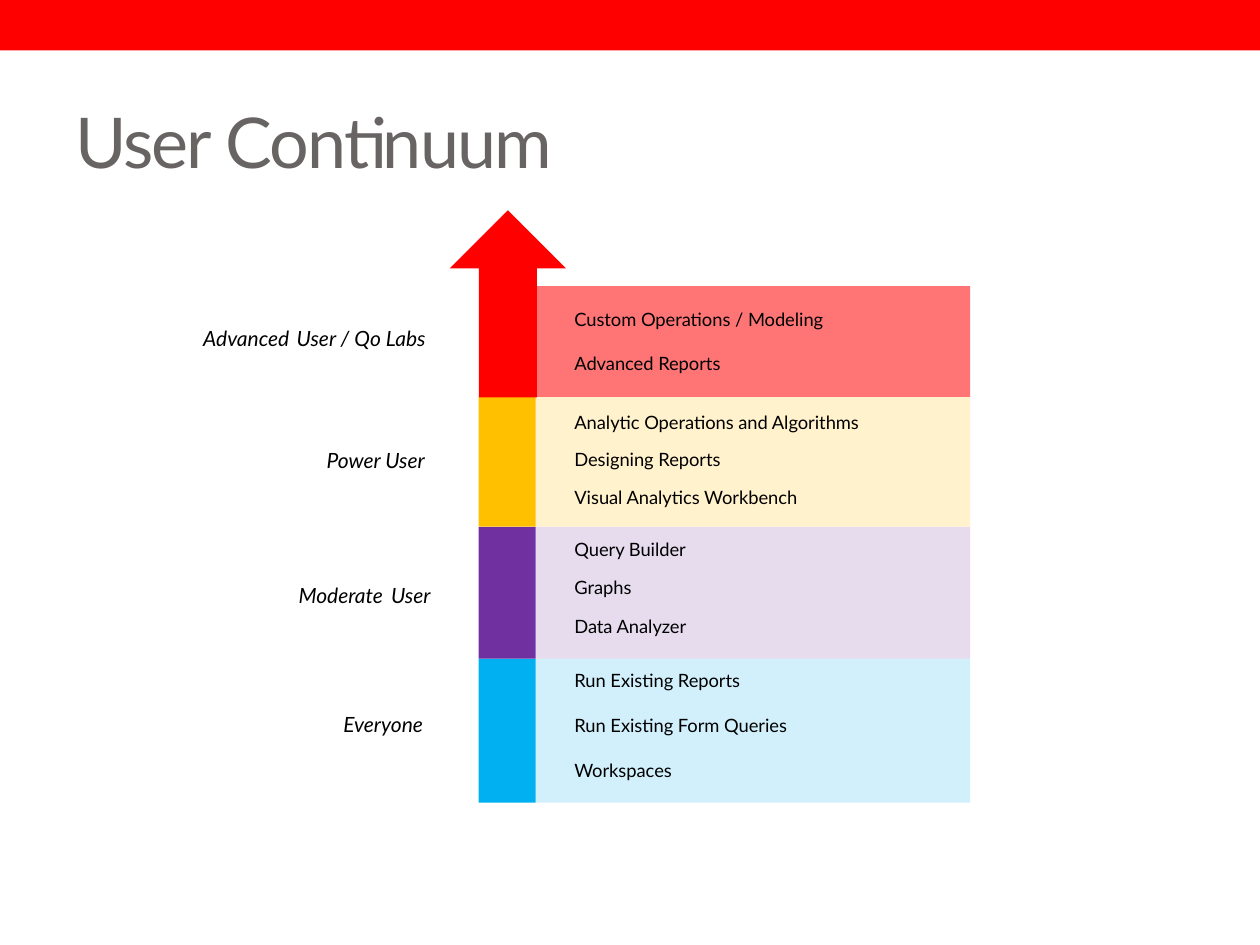
import lxml.etree
import pptx
import pptx.dml.color
import pptx.enum.shapes
import pptx.enum.text
import pptx.oxml.ns
import pptx.util

Cm = pptx.util.Cm
SHAPE = pptx.enum.shapes.MSO_SHAPE
ALIGN = pptx.enum.text.PP_ALIGN
ANCHOR = pptx.enum.text.MSO_ANCHOR

FONT = "Lato"
STRIP_LEFT, STRIP_WIDTH = 9.65, 1.15
PANEL_LEFT, PANEL_WIDTH = 10.8, 8.76
ITEM_LEFT, ITEM_WIDTH, ITEM_HEIGHT = 11.4, 7.5, 0.64
ITEM_SIZE, LABEL_SIZE = 10.5, 12

BANDS = [
    {
        "top": 5.77, "bottom": 8, "color": "FF0000", "opacity": 54,
        "label_at": (3.61, 6.25, 5.46, 0.97),
        "label": [("Advanced", 12, True), (" ", 18, True), ("User / Qo Labs", 12, True)],
        "first_item": 6.12, "item_step": 0.88,
        "items": ["Custom Operations / Modeling", "Advanced Reports"],
    },
    {
        "top": 8, "bottom": 10.62, "color": "FFC000", "opacity": 20,
        "label_at": (6.1, 8.92, 2.95, 0.71),
        "label": [("Power User", 12, True)],
        "first_item": 8.18, "item_step": 0.76,
        "items": ["Analytic Operations and Algorithms", "Designing Reports",
                  "Visual Analytics Workbench"],
    },
    {
        "top": 10.62, "bottom": 13.28, "color": "7030A0", "opacity": 17,
        "label_at": (5.66, 11.43, 3.38, 0.97),
        "label": [("Moderate", 12, True), (" ", 18, False), ("User", 12, True)],
        "first_item": 10.74, "item_step": 0.78,
        "items": ["Query Builder", "Graphs", "Data Analyzer"],
    },
    {
        "top": 13.28, "bottom": 16.18, "color": "00B0F0", "opacity": 18,
        "label_at": (6.25, 14.25, 2.95, 0.71),
        "label": [("Everyone", 12, True)],
        "first_item": 13.39, "item_step": 0.91,
        "items": ["Run Existing Reports", "Run Existing Form Queries", "Workspaces"],
    },
]


def rgb(value):
    """Turn a hex string into a colour."""
    return pptx.dml.color.RGBColor.from_string(value)


def add_block(page, kind, place, color, opacity=100):
    """Add a borderless filled shape; place is left, top, width, height in cm."""
    block = page.shapes.add_shape(kind, *map(Cm, place))
    block.shadow.inherit = False
    block.line.fill.background()
    block.fill.solid()
    block.fill.fore_color.rgb = rgb(color)
    if opacity < 100:
        tag = block._element.spPr.find(".//" + pptx.oxml.ns.qn("a:srgbClr"))
        alpha = lxml.etree.SubElement(tag, pptx.oxml.ns.qn("a:alpha"))
        alpha.set("val", str(opacity * 1000))
    return block


def add_text(page, place, spans, color="000000", align=ALIGN.LEFT,
             margins=(0.18, 0.1), anchor=ANCHOR.TOP):
    """Add a one-paragraph box from (text, size, italic) spans."""
    box = page.shapes.add_textbox(*map(Cm, place))
    frame = box.text_frame
    frame.word_wrap = True
    frame.vertical_anchor = anchor
    frame.margin_left = frame.margin_right = Cm(margins[0])
    frame.margin_top = frame.margin_bottom = Cm(margins[1])
    para = frame.paragraphs[0]
    para.alignment = align
    for text, size, italic in spans:
        span = para.add_run()
        span.text = text
        span.font.name = FONT
        span.font.size = pptx.util.Pt(size)
        span.font.italic = italic
        span.font.color.rgb = rgb(color)
    return box


def add_title(page, text):
    """Add the tightly spaced slide title."""
    box = add_text(page, (1.27, 1.47, 22.86, 2.74), [(text, 40, False)], "696464",
                   margins=(0.25, 0.13), anchor=ANCHOR.MIDDLE)
    span = box.text_frame.paragraphs[0].runs[0]
    span._r.get_or_add_rPr().set("spc", "-100")


def add_band(page, band):
    """Add one user level: panel, strip, label and items."""
    top, height = band["top"], band["bottom"] - band["top"]
    add_block(page, SHAPE.RECTANGLE, (PANEL_LEFT, top, PANEL_WIDTH, height),
              band["color"], band["opacity"])
    if band is BANDS[0]:
        add_block(page, SHAPE.UP_ARROW, (9.07, 4.24, 2.34, 3.77), band["color"])
    else:
        add_block(page, SHAPE.RECTANGLE, (STRIP_LEFT, top, STRIP_WIDTH, height),
                  band["color"])
    add_text(page, band["label_at"], band["label"], align=ALIGN.CENTER)
    for index, item in enumerate(band["items"]):
        item_top = band["first_item"] + index * band["item_step"]
        add_text(page, (ITEM_LEFT, item_top, ITEM_WIDTH, ITEM_HEIGHT),
                 [(item, ITEM_SIZE, False)])


def main():
    """Build the deck and save it."""
    deck = pptx.Presentation()
    deck.slide_width, deck.slide_height = Cm(25.4), Cm(19.05)
    page = deck.slides.add_slide(deck.slide_layouts[6])
    add_block(page, SHAPE.RECTANGLE, (0, 0, 25.4, 1.02), "FF0000")
    add_title(page, "User Continuum")
    for band in reversed(BANDS):
        add_band(page, band)
    deck.save("out.pptx")


if __name__ == "__main__":
    main()
